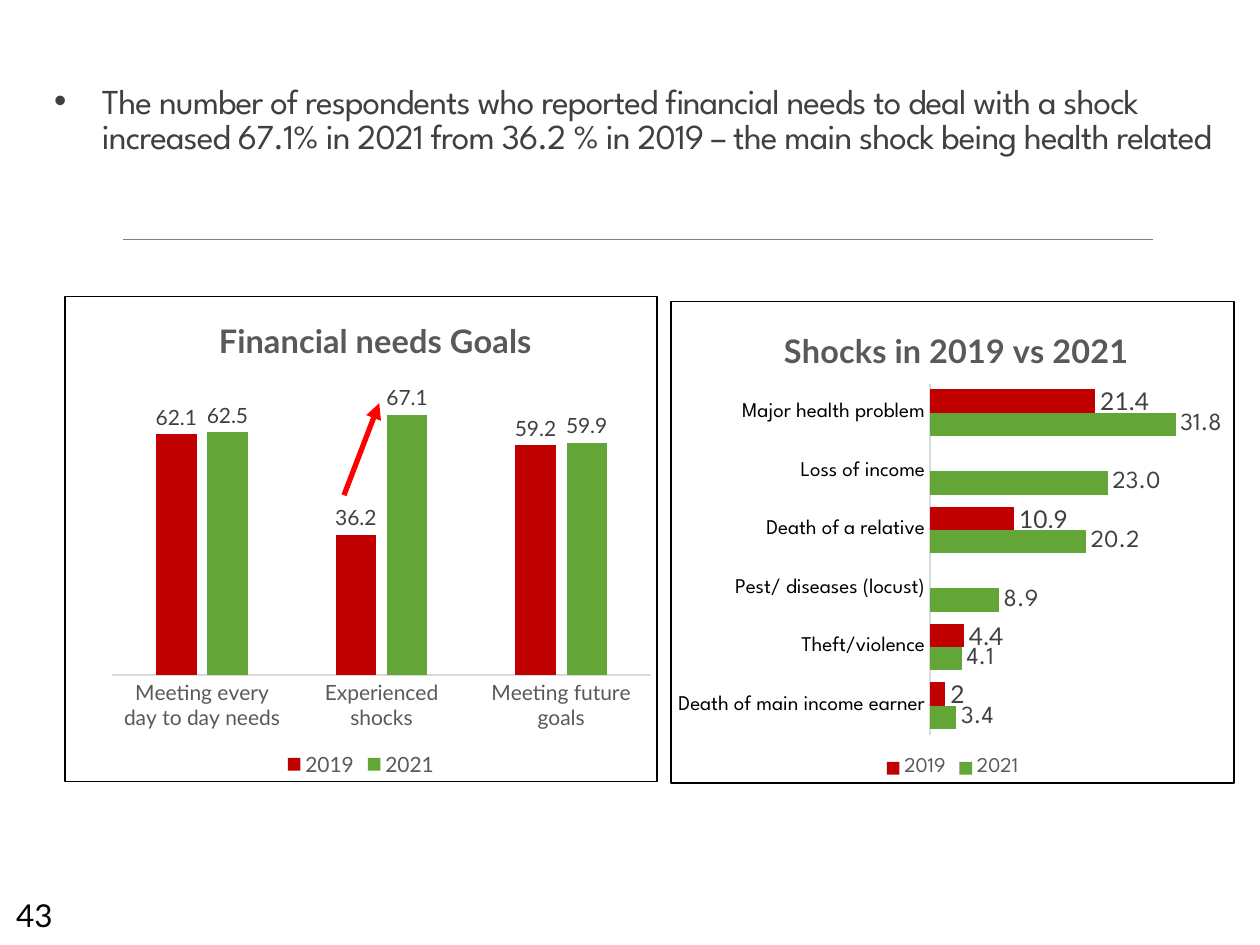
import dataclasses

import pptx
import pptx.chart.data
import pptx.dml.color
import pptx.enum.chart
import pptx.enum.shapes
import pptx.oxml
import pptx.oxml.ns
import pptx.util

Inches = pptx.util.Inches
Pt = pptx.util.Pt
RGB = pptx.dml.color.RGBColor.from_string


@dataclasses.dataclass(frozen=True)
class Theme:
    sans: str = "Lato"
    display: str = "League Spartan"
    ink: str = "000000"
    dark: str = "404040"
    muted: str = "595959"
    rule: str = "808080"
    axis: str = "D9D9D9"
    red: str = "C00000"
    green: str = "63A537"
    arrow: str = "FF0000"
    headline_size: int = 20
    number_size: int = 18
    title_size: float = 18.6
    large_label_size: int = 14
    label_size: int = 12
    base_size: int = 10


THEME = Theme()


def apply_format(target, values):
    for name, value in values.items():
        setattr(target, name, value)


def set_font(font, face, size, color, bold=False):
    apply_format(font, {"name": face, "size": Pt(size), "bold": bold})
    font.color.rgb = RGB(color)


def parse_element(tag, content="", attributes=""):
    namespaces = pptx.oxml.ns.nsdecls("a", "c")
    return pptx.oxml.parse_xml(f"<{tag} {namespaces} {attributes}>{content}</{tag}>")


def add_text(slide, box, text, face, size, color, margins=(0.1, 0.05)):
    shape = slide.shapes.add_textbox(*map(Inches, box))
    horizontal, vertical = map(Inches, margins)
    apply_format(shape.text_frame, {
        "word_wrap": True,
        "margin_left": horizontal, "margin_right": horizontal,
        "margin_top": vertical, "margin_bottom": vertical,
    })
    paragraph = shape.text_frame.paragraphs[0]
    run = paragraph.add_run()
    run.text = text
    set_font(run.font, face, size, color)
    return paragraph


def add_headline(slide, text):
    paragraph = add_text(slide, (0.36, 0.64, 9.33, 1.14), text, THEME.display,
                         THEME.headline_size, THEME.dark, (0.07, 0.04))
    paragraph.line_spacing = 0.85
    properties = paragraph._p.get_or_add_pPr()
    properties.set("marL", str(Inches(0.38)))
    properties.set("indent", str(Inches(-0.38)))
    properties.append(parse_element("a:buFont", attributes='typeface="Arial"'))
    properties.append(parse_element("a:buChar", attributes='char="•"'))
    paragraph.runs[0].font._element.set("spc", "-50")


def add_line(slide, start, end, color, width, arrow=False):
    connector = slide.shapes.add_connector(
        pptx.enum.shapes.MSO_CONNECTOR.STRAIGHT, *map(Inches, start + end))
    connector.line.color.rgb = RGB(color)
    connector.line.width = Pt(width)
    if arrow:
        connector.line._get_or_add_ln().append(
            parse_element("a:tailEnd", attributes='type="triangle"'))
    connector._element.spPr.append(parse_element("a:effectLst"))


def make_layout(target, **fractions):
    content = f'<c:layoutTarget val="{target}"/>' if target else ""
    content += "".join(f'<c:{name}Mode val="edge"/>' for name in ("x", "y"))
    content += "".join(f'<c:{name} val="{value}"/>' for name, value in fractions.items())
    return parse_element("c:layout", f"<c:manualLayout>{content}</c:manualLayout>")


def place_plot(chart, x, y, w, h):
    area = chart._chartSpace.chart.plotArea
    for layout in area.findall(pptx.oxml.ns.qn("c:layout")):
        area.remove(layout)
    area.insert(0, make_layout("inner", x=x, y=y, w=w, h=h))


def add_title(chart, text, x, y):
    chart.has_title = True
    run = chart.chart_title.text_frame.paragraphs[0].add_run()
    run.text = text
    set_font(run.font, THEME.sans, THEME.title_size, THEME.muted, True)
    title = chart.chart_title._element
    for layout in title.findall(pptx.oxml.ns.qn("c:layout")):
        title.remove(layout)
    title.find(pptx.oxml.ns.qn("c:tx")).addnext(make_layout(None, x=x, y=y))


def add_border(chart):
    line = f'<a:solidFill><a:srgbClr val="{THEME.ink}"/></a:solidFill>'
    chart._chartSpace.chart.addnext(parse_element(
        "c:spPr", f'<a:noFill/><a:ln w="{Pt(0.75)}">{line}</a:ln>'))


def style_series(series, color, face, size, number_format):
    series.format.fill.solid()
    series.format.fill.fore_color.rgb = RGB(color)
    series.invert_if_negative = False
    labels = series.data_labels
    apply_format(labels, {
        "show_value": True,
        "position": pptx.enum.chart.XL_LABEL_POSITION.OUTSIDE_END,
        "number_format": number_format,
        "number_format_is_linked": False,
    })
    set_font(labels.font, face, size, THEME.dark)


def add_bar_chart(slide, kind, box, title, categories, series_rows, plot_box,
                  plot_format, maximum, face, category_color):
    data = pptx.chart.data.CategoryChartData()
    data.categories = categories
    for name, values, *style in series_rows:
        data.add_series(name, values)
    chart = slide.shapes.add_chart(kind, *map(Inches, box), data).chart
    set_font(chart.font, THEME.sans, THEME.base_size, THEME.ink)
    add_border(chart)
    add_title(chart, *title)
    place_plot(chart, *plot_box)
    apply_format(chart.plots[0], {"vary_by_categories": False, **plot_format})
    for series, (name, values, *style) in zip(chart.plots[0].series, series_rows):
        style_series(series, *style)
    apply_format(chart.value_axis, {
        "visible": False, "has_major_gridlines": False,
        "minimum_scale": 0, "maximum_scale": maximum,
    })
    axis = chart.category_axis
    axis.major_tick_mark = pptx.enum.chart.XL_TICK_MARK.NONE
    axis.format.line.color.rgb = RGB(THEME.axis)
    axis.format.line.width = Pt(0.75)
    set_font(axis.tick_labels.font, face, THEME.label_size, category_color)
    chart.has_legend = True
    apply_format(chart.legend, {
        "position": pptx.enum.chart.XL_LEGEND_POSITION.BOTTOM,
        "include_in_layout": False,
    })
    set_font(chart.legend.font, face, THEME.label_size, THEME.muted)


def main():
    presentation = pptx.Presentation()
    apply_format(presentation, {"slide_width": Inches(10), "slide_height": Inches(7.5)})
    slide = presentation.slides.add_slide(presentation.slide_layouts[6])
    add_line(slide, (0.98, 1.9), (9.15, 1.9), THEME.rule, 0.5)
    add_headline(slide, "The number of respondents who reported financial needs to deal "
                 "with a shock increased 67.1% in 2021 from 36.2 % in 2019 – the main "
                 "shock being health related")
    chart_type = pptx.enum.chart.XL_CHART_TYPE
    goal_label = (THEME.sans, THEME.label_size, "General")
    add_bar_chart(
        slide, chart_type.COLUMN_CLUSTERED, (0.51, 2.35, 4.71, 3.86),
        ("Financial needs Goals", 0.25, 0.03),
        ["Meeting every day to day needs", "Experienced shocks", "Meeting future goals"],
        [("2019", (62.1, 36.2, 59.2), THEME.red, *goal_label),
         ("2021", (62.5, 67.1, 59.9), THEME.green, *goal_label)],
        (0.08, 0.14, 0.91, 0.64), {"gap_width": 219, "overlap": -27}, 80,
        THEME.sans, THEME.muted)
    add_bar_chart(
        slide, chart_type.BAR_CLUSTERED, (5.32, 2.39, 4.48, 3.83),
        ("Shocks in 2019 vs 2021", 0.19, 0.04),
        ["Death of main income earner", "Theft/violence", "Pest/ diseases (locust)",
         "Death of a relative", "Loss of income", "Major health problem"],
        [("2021", (3.4, 4.1, 8.9, 20.2, 23, 31.8), THEME.green,
          THEME.display, THEME.large_label_size, "###0.0"),
         ("2019", (2, 4.4, None, 10.9, None, 21.4), THEME.red,
          THEME.sans, THEME.large_label_size, "General")],
        (0.46, 0.17, 0.48, 0.73), {"gap_width": 50, "overlap": 0}, 35,
        THEME.display, THEME.ink)
    add_line(slide, (2.73, 3.93), (3.01, 3.2), THEME.arrow, 3, arrow=True)
    add_text(slide, (0.03, 7.06, 0.56, 0.44), "43", THEME.sans,
             THEME.number_size, THEME.ink)
    presentation.save("out.pptx")


if __name__ == "__main__":
    main()
